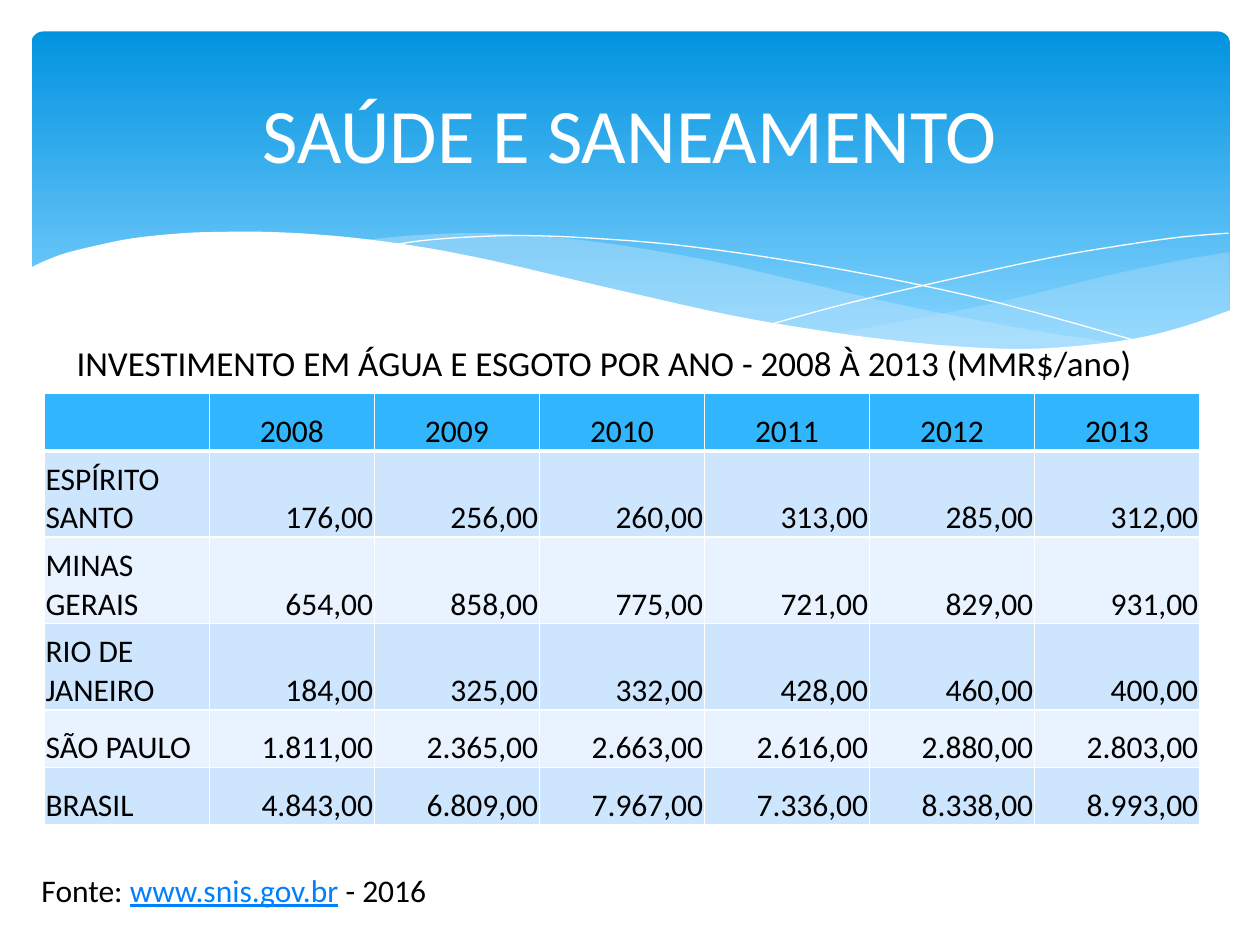
from dataclasses import dataclass
from itertools import product

from lxml import etree
from pptx import Presentation
from pptx.dml import color
from pptx.enum import shapes, text
from pptx.oxml import ns
from pptx.util import Pt

FONT = "Calibri"
WHITE, BLACK, LINK = "FFFFFF", "000000", "0080FF"
HEAD, ODD, EVEN = "31B6FD", "CEE5FE", "E8F3FF"
LEFT, MID, RIGHT = text.PP_ALIGN.LEFT, text.PP_ALIGN.CENTER, text.PP_ALIGN.RIGHT
Points = list[tuple[float, float]]


@dataclass
class Wave:
    edges: list[Points]
    fill: str | None = None
    alpha: int = 100


@dataclass
class Note:
    box: tuple[float, float, float, float]
    runs: list[tuple[str, str, bool]]
    size: int


WAVES = [
    Wave([[(702.7, 144), (673.2, 149), (641.5, 155.5), (619.9, 160.6), (579.6, 170.6),
           (542.2, 178.6), (508.3, 185), (475.9, 190.8)],
          [(475.9, 190.8), (497.5, 193.7), (527, 197.3), (553.7, 199.4), (586.1, 200.2),
           (614.9, 198.7), (640.1, 195.8), (663.1, 190.8), (683.3, 185), (702.7, 177.8)]],
         "C6E7FC", 29),
    Wave([[(643, 196.6), (602.6, 190.8), (558, 182.9), (508.3, 172.8), (452.9, 159.8),
           (409.7, 149.8), (370.1, 142.6), (334.8, 137.5), (302.4, 134.6), (273.6, 133.2),
           (247.7, 133.9), (225.4, 135.4), (205.9, 137.5)],
          [(205.9, 137.5), (246.2, 143.3), (290.9, 151.9), (323.3, 159.8), (381.6, 172.8),
           (432.7, 183.6), (478.8, 191.5), (519.8, 197.3), (556.6, 199.4), (589, 200.2),
           (617, 199.4), (643, 196.6)]],
         "C6E7FC", 40),
    Wave([[(222.5, 140.4), (241.2, 137.5), (269.3, 135.4), (299.5, 134.6), (337.7, 136.1),
           (383.8, 139.7), (437.8, 146.9), (500.4, 157.7), (572.4, 173.5), (653, 195.8)]]),
    Wave([[(441.4, 185), (483.8, 173.5), (538.6, 160.6), (601.9, 146.9), (644.4, 139.7),
           (675.4, 135.4), (702, 133.2)]]),
    Wave([[(703.4, 177.1), (676.8, 186.5), (647.3, 193.7), (612, 198), (582.5, 199.4),
           (547.9, 198), (509.8, 194.4), (466.6, 188.6), (416.9, 180), (362.2, 167.8),
           (321.8, 158.4), (281.5, 149), (244.8, 141.8), (210.2, 136.8), (180, 133.9),
           (151.9, 132.5), (127.4, 132.5), (105.1, 133.2), (76.3, 136.1), (54.7, 140.4),
           (37.4, 144.7), (25.9, 149), (16.6, 153.4)],
          [(16.6, 236.9), (703.4, 236.9)]],
         WHITE),
]

ROWS = [
    ["", "2008", "2009", "2010", "2011", "2012", "2013"],
    ["ESPÍRITO SANTO", "176,00", "256,00", "260,00", "313,00", "285,00", "312,00"],
    ["MINAS GERAIS", "654,00", "858,00", "775,00", "721,00", "829,00", "931,00"],
    ["RIO DE JANEIRO", "184,00", "325,00", "332,00", "428,00", "460,00", "400,00"],
    ["SÃO PAULO", "1.811,00", "2.365,00", "2.663,00", "2.616,00", "2.880,00", "2.803,00"],
    ["BRASIL", "4.843,00", "6.809,00", "7.967,00", "7.336,00", "8.338,00", "8.993,00"],
]
HIGH = [32.9, 49.35, 49.35, 49.35, 32.9, 32.9]

NOTES = [
    Note((36.7, 191.5, 652.3, 31.5),
         [("INVESTIMENTO EM ÁGUA E ESGOTO POR ANO - 2008 À 2013 (MMR$/ano)", BLACK, False)], 20),
    Note((16.6, 494, 495.4, 29),
         [("Fonte: ", BLACK, False), ("www.snis.gov.br", LINK, True),
          (" - 2016", BLACK, False)], 18),
]


def paint(target, tint: str) -> None:
    target.rgb = color.RGBColor.from_string(tint)


def write(para, words: str, *, size=18, tint=BLACK, align=LEFT, under=False) -> None:
    para.alignment = align
    run = para.add_run()
    run.text = words
    run.font.name, run.font.size = FONT, Pt(size)
    run.font.underline = under
    paint(run.font.color, tint)


def smooth(pts: Points, steps: int = 4) -> Points:
    if len(pts) < 3:
        return pts
    ends = [pts[0], *pts, pts[-1]]
    out = []
    for a, b, c, d in zip(ends, ends[1:], ends[2:], ends[3:]):
        for t in (k / steps for k in range(steps)):
            out.append(tuple(
                (2 * q + (r - p) * t + (2 * p - 5 * q + 4 * r - s) * t**2
                 + (3 * q - p - 3 * r + s) * t**3) / 2
                for p, q, r, s in zip(a, b, c, d)))
    return out + [pts[-1]]


def draw_wave(slide, wave: Wave) -> None:
    pts = [(Pt(x), Pt(y)) for edge in wave.edges for x, y in smooth(edge)]
    pen = slide.shapes.build_freeform(*pts[0])
    pen.add_line_segments(pts[1:], close=wave.fill is not None)
    shape = pen.convert_to_shape()
    shape.shadow.inherit = False
    if wave.fill is None:
        shape.fill.background()
        shape.line.width = 0
        paint(shape.line.color, WHITE)
        return
    shape.line.fill.background()
    shape.fill.solid()
    paint(shape.fill.fore_color, wave.fill)
    if wave.alpha < 100:
        tone = shape.element.spPr.find(ns.qn("a:solidFill"))[0]
        etree.SubElement(tone, ns.qn("a:alpha"), val=str(wave.alpha * 1000))


def draw_band(slide) -> None:
    band = slide.shapes.add_shape(
        shapes.MSO_SHAPE.ROUNDED_RECTANGLE, Pt(18), Pt(18), Pt(684.7), Pt(194.4))
    band.adjustments[0] = 0.034
    band.shadow.inherit = False
    band.line.fill.background()
    band.fill.gradient()
    band.fill.gradient_angle = 270
    for stop, (spot, tint) in zip(band.fill.gradient_stops, [(0, "0293E0"), (0.9, "83D3FE")]):
        stop.position = spot
        paint(stop.color, tint)


def set_edge(cell, side: str, width: float) -> None:
    props = cell._tc.get_or_add_tcPr()
    line = etree.SubElement(props, ns.qn(f"a:ln{side}"), w=str(Pt(width)))
    fill = etree.SubElement(line, ns.qn("a:solidFill"))
    etree.SubElement(fill, ns.qn("a:srgbClr"), val=WHITE)


def draw_table(slide) -> None:
    rows, cols = len(ROWS), len(ROWS[0])
    grid = slide.shapes.add_table(
        rows, cols, Pt(25.3), Pt(224.8), Pt(660.24), Pt(sum(HIGH))).table
    for col in grid.columns:
        col.width = Pt(94.32)
    for row, high in zip(grid.rows, HIGH):
        row.height = Pt(high)
    for r, c in product(range(rows), range(cols)):
        cell = grid.cell(r, c)
        cell.vertical_anchor = text.MSO_ANCHOR.BOTTOM
        cell.margin_left = cell.margin_right = cell.margin_top = Pt(0.75)
        cell.margin_bottom = 0
        for side in "LRTB":
            thick = (r, side) in ((0, "B"), (1, "T"))
            set_edge(cell, side, 3 if thick else 1)
        cell.fill.solid()
        paint(cell.fill.fore_color, HEAD if r == 0 else ODD if r % 2 else EVEN)
        if ROWS[r][c]:
            align = MID if r == 0 else RIGHT if c else LEFT
            write(cell.text_frame.paragraphs[0], ROWS[r][c], align=align)


def draw_title(slide) -> None:
    title = slide.shapes.title
    title.left, title.top, title.width, title.height = Pt(36), Pt(26.6), Pt(648), Pt(98.6)
    title.text_frame.vertical_anchor = text.MSO_ANCHOR.MIDDLE
    write(title.text_frame.paragraphs[0], "SAÚDE E SANEAMENTO", size=44, tint=WHITE, align=MID)
    title.element.getparent().append(title.element)


def draw_note(slide, note: Note) -> None:
    frame = slide.shapes.add_textbox(*map(Pt, note.box)).text_frame
    frame.word_wrap = True
    for words, tint, under in note.runs:
        write(frame.paragraphs[0], words, size=note.size, tint=tint, under=under)


def main() -> None:
    deck = Presentation()
    deck.slide_width, deck.slide_height = Pt(720), Pt(540)
    slide = deck.slides.add_slide(deck.slide_layouts[5])
    draw_band(slide)
    for wave in WAVES:
        draw_wave(slide, wave)
    draw_title(slide)
    draw_table(slide)
    for note in NOTES:
        draw_note(slide, note)
    deck.save("out.pptx")


if __name__ == "__main__":
    main()
